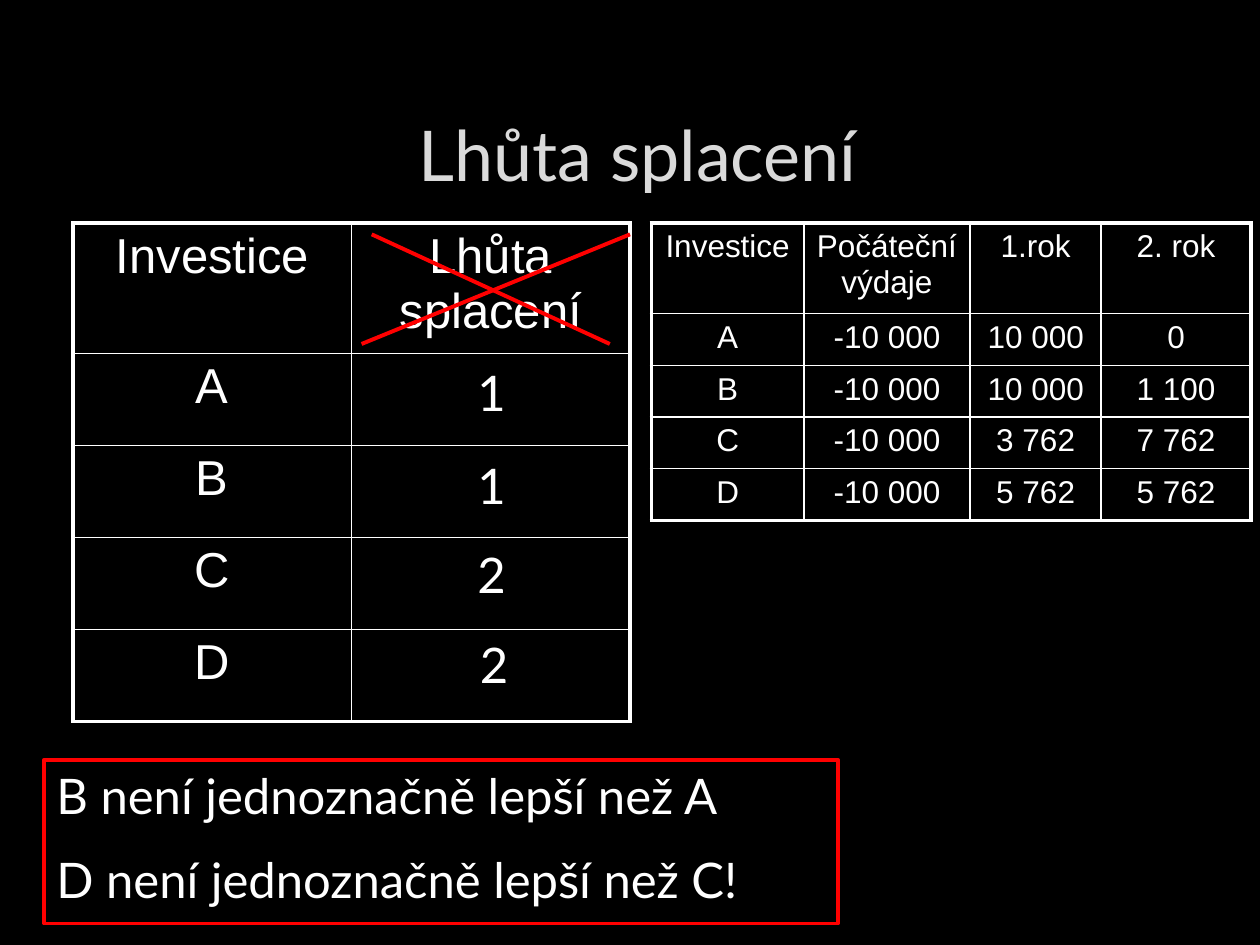
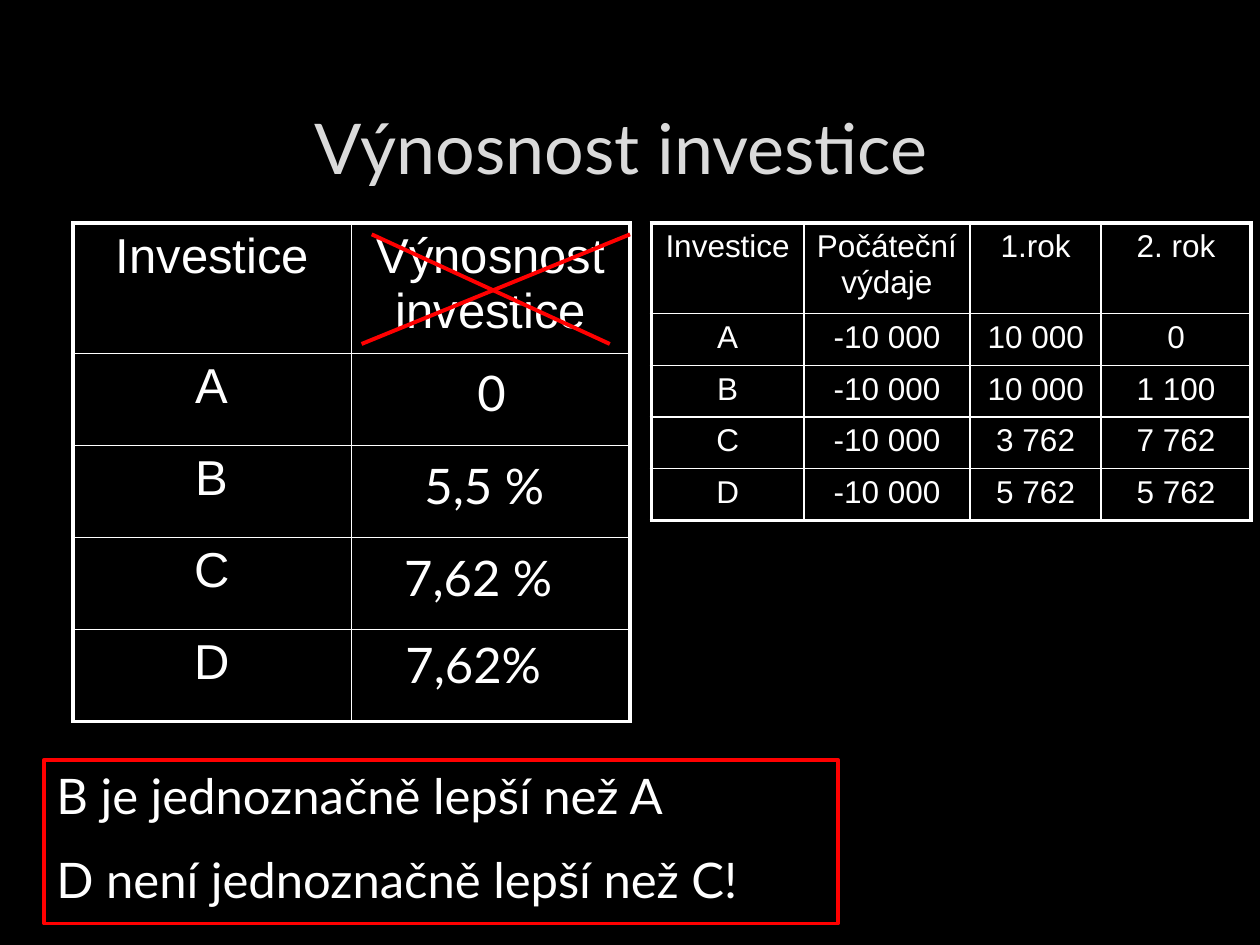
from lxml import etree
from pptx import Presentation
from pptx.dml.color import RGBColor
from pptx.enum.shapes import MSO_CONNECTOR, MSO_SHAPE
from pptx.enum.text import MSO_ANCHOR, PP_ALIGN
from pptx.oxml.ns import qn
from pptx.util import Pt

PX = 9144  # 100 px to the inch
BLACK = RGBColor(0x00, 0x00, 0x00)
WHITE = RGBColor(0xFF, 0xFF, 0xFF)
GREY = RGBColor(0xDA, 0xDA, 0xDA)
RED = RGBColor(0xFF, 0x00, 0x00)
LATO, ARIAL = "Lato", "Arial"
THIN, THICK = Pt(1), Pt(2.25)
LEFT, CENTER = PP_ALIGN.LEFT, PP_ALIGN.CENTER
TOP, MIDDLE = MSO_ANCHOR.TOP, MSO_ANCHOR.MIDDLE
RECT, STRAIGHT = MSO_SHAPE.RECTANGLE, MSO_CONNECTOR.STRAIGHT

FLOWS = [
    ["Investice", "Počáteční výdaje", "1.rok", "2. rok"],
    ["A", "-10 000", "10 000", "0"],
    ["B", "-10 000", "10 000", "1 100"],
    ["C", "-10 000", "3 762", "7 762"],
    ["D", "-10 000", "5 762", "5 762"],
]
# Title, its place, criterion, values with left, top and width, verdicts
PAGES = [
    ("Lhůta splacení", (56, 63), "Lhůta splacení",
     [("1", 369, 283, 39), ("1", 369, 357, 39),
      ("2", 369, 427, 39), ("2", 371, 499, 39)],
     ["B není jednoznačně lepší než A", "D není jednoznačně lepší než C!"]),
    ("Výnosnost investice", (43, 58), "Výnosnost investice",
     [("0", 369, 283, 39), ("5,5 %", 327, 357, 126),
      ("7,62 %", 311, 430, 165), ("7,62%", 312, 499, 150)],
     ["B je jednoznačně lepší než A", "D není jednoznačně lepší než C!"]),
]


def emu(*sizes):
    return [size * PX for size in sizes]


def style(frame, size, font=LATO, color=WHITE, align=LEFT, gap=0):
    """Format all text; gap is the space between paragraphs in points."""
    frame.word_wrap = True
    for i, para in enumerate(frame.paragraphs):
        para.alignment = align
        if i and gap:
            para.space_before = Pt(gap)
        for run in para.runs:
            run.font.size = Pt(size)
            run.font.name = font
            run.font.color.rgb = color


def add_text(slide, text, box, size, color=WHITE, align=LEFT, anchor=TOP):
    frame = slide.shapes.add_textbox(*emu(*box)).text_frame
    frame.text = text
    frame.vertical_anchor = anchor
    style(frame, size, color=color, align=align)


def set_edges(cell, widths):
    """Draw white borders; widths run left, right, top, bottom."""
    props = cell._tc.get_or_add_tcPr()
    for i, (side, width) in enumerate(zip("LRTB", widths)):
        line = etree.Element(qn(f"a:ln{side}"), w=str(width))
        fill = etree.SubElement(line, qn("a:solidFill"))
        etree.SubElement(fill, qn("a:srgbClr"), val=str(WHITE))
        props.insert(i, line)


def add_grid(slide, rows, left, top, widths, heights, size):
    box = emu(left, top, sum(widths), sum(heights))
    table = slide.shapes.add_table(len(rows), len(widths), *box).table
    table.first_row = table.horz_banding = False
    for col, width in zip(table.columns, emu(*widths)):
        col.width = width
    for row, height in zip(table.rows, emu(*heights)):
        row.height = height
    for r, row in enumerate(rows):
        for c, text in enumerate(row):
            cell = table.cell(r, c)
            cell.text = text
            cell.fill.background()
            style(cell.text_frame, size, ARIAL, align=CENTER)
            outer = (c == 0, c == len(row) - 1, r == 0, r == len(rows) - 1)
            set_edges(cell, [THICK if edge else THIN for edge in outer])


def add_verdict(slide, lines):
    box = slide.shapes.add_shape(RECT, *emu(35, 603, 630, 130))
    box.shadow.inherit = False
    box.fill.background()
    box.line.color.rgb = RED
    box.line.width = THICK
    frame = box.text_frame
    frame.text = "\n".join(lines)
    frame.vertical_anchor = TOP
    style(frame, 28, gap=14)


def add_line(slide, *ends):
    line = slide.shapes.add_connector(STRAIGHT, *emu(*ends))
    line.line.color.rgb = RED
    line.line.width = THICK
    etree.SubElement(line._element.spPr, qn("a:effectLst"))


def add_page(deck, title, place, head, values, lines):
    slide = deck.slides.add_slide(deck.slide_layouts[6])
    slide.background.fill.solid()
    slide.background.fill.fore_color.rgb = BLACK
    add_text(slide, title, (*place, 900, 117), 40, GREY, CENTER, MIDDLE)
    add_grid(slide, FLOWS, 517, 177, [121, 132, 104, 119],
             [72] + [41] * 4, 18)
    names = [["Investice", head]] + [[name, ""] for name in "ABCD"]
    add_grid(slide, names, 58, 177, [221] * 2, [97] + [73] * 4, 28)
    for text, left, top, width in values:
        add_text(slide, text, (left, top, width, 57), 28)
    add_verdict(slide, lines)
    add_line(slide, 287, 273, 500, 186)
    add_line(slide, 295, 186, 484, 273)


def main():
    deck = Presentation()
    deck.slide_width, deck.slide_height = emu(1000, 750)
    for page in PAGES:
        add_page(deck, *page)
    deck.save("out.pptx")


if __name__ == "__main__":
    main()
